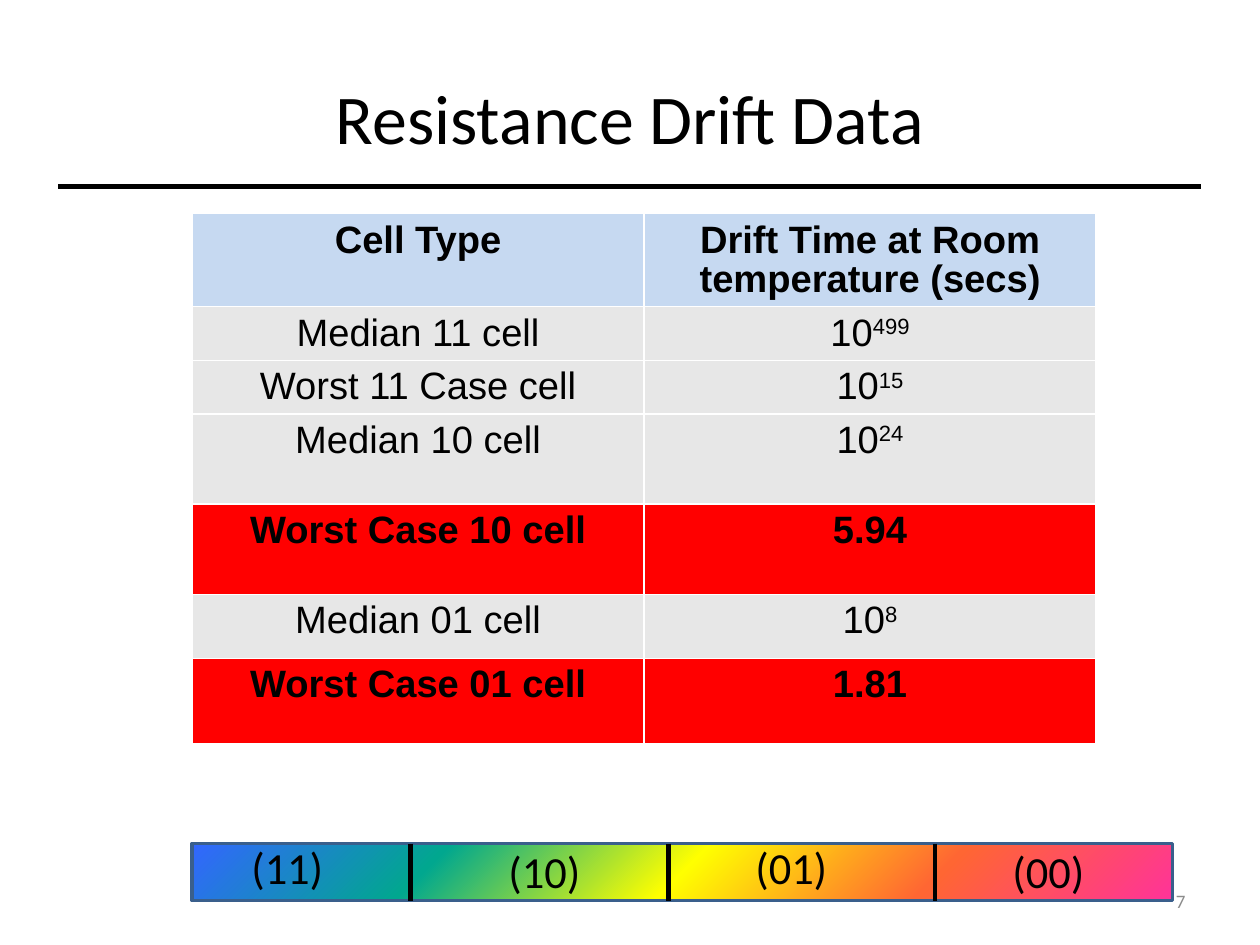
from lxml import etree
from pptx import Presentation
from pptx.dml.color import RGBColor
from pptx.enum.shapes import MSO_CONNECTOR as Line, MSO_SHAPE as Shape
from pptx.enum.text import MSO_ANCHOR as Anchor, PP_ALIGN as Align
from pptx.oxml import parse_xml
from pptx.oxml.ns import nsdecls, qn
from pptx.util import Cm, Inches, Pt


def add_run(para, text, size, color="000000", font="Calibri", bold=False):
    run = para.add_run()
    run.text = text
    run.font.size, run.font.name, run.font.bold = Pt(size), font, bold
    run.font.color.rgb = RGBColor.from_string(color)
    return run


def add_rule(x1, y1, x2, y2):
    """Draw a thick black line without a shadow."""
    rule = slide.shapes.add_connector(
        Line.STRAIGHT, Inches(x1), Inches(y1), Inches(x2), Inches(y2))
    rule.line.width = Pt(3)
    rule.line.color.rgb = RGBColor.from_string("000000")
    etree.SubElement(rule._element.spPr, qn("a:effectLst"))


WIDE, HIGH = Cm(28), Cm(21)
LEFT = 1.68

deck = Presentation()
deck.slide_width, deck.slide_height = WIDE, HIGH
slide = deck.slides.add_slide(deck.slide_layouts[5])

# Title and rule
title = slide.shapes.title
title.left, title.top = int(WIDE * 0.05), int(HIGH * 0.04)
title.width, title.height = int(WIDE * 0.9), int(HIGH / 6)
title.text_frame.vertical_anchor = Anchor.MIDDLE
para = title.text_frame.paragraphs[0]
para.alignment = Align.CENTER
add_run(para, "Resistance Drift Data", 44)
add_rule(0.51, 1.63, 10.51, 1.63)

# Drift table: cell type, time, exponent, row height, fill, bold
HEAD, PLAIN, ALERT = ("C6D9F1", True), ("E7E7E7", False), ("FF0000", True)
rows = [
    ("Cell Type", "Drift Time at Room temperature (secs)", "", 0.81, HEAD),
    ("Median 11 cell", "10", "499", 0.47, PLAIN),
    ("Worst 11 Case cell", "10", "15", 0.47, PLAIN),
    ("Median 10 cell", "10", "24", 0.79, PLAIN),
    ("Worst Case 10 cell", "5.94", "", 0.79, ALERT),
    ("Median 01 cell", "10", "8", 0.56, PLAIN),
    ("Worst Case 01 cell", "1.81", "", 0.75, ALERT),
]
total = sum(row[3] for row in rows)
table = slide.shapes.add_table(
    len(rows), 2, Inches(LEFT), Inches(1.87), Inches(7.91), Inches(total)).table
table.first_row = table.horz_banding = False
for r, (kind, time, power, tall, (fill, bold)) in enumerate(rows):
    table.rows[r].height = Inches(tall)
    for c, text in enumerate((kind, time)):
        cell = table.cell(r, c)
        cell.margin_top, cell.margin_bottom = Inches(0.07), Inches(0.05)
        cell.fill.solid()
        cell.fill.fore_color.rgb = RGBColor.from_string(fill)
        para = cell.text_frame.paragraphs[0]
        para.alignment, para.line_spacing = Align.CENTER, 0.93
        add_run(para, text, 24, font="Arial", bold=bold)
        if c == 1 and power:
            run = add_run(para, power, 24, font="Arial", bold=bold)
            run.font._element.set("baseline", "30000")

# Resistance band, shaded from the lower right corner
top, tall = 7.38, 0.5
band = slide.shapes.add_shape(
    Shape.RECTANGLE, Inches(LEFT), Inches(top), Inches(8.58), Inches(tall))
band.shadow.inherit = False
band.line.width = Pt(2)
band.line.color.rgb = RGBColor.from_string("3A5F8C")
hues = ["FF3399", "FF6633", "FFFF00", "01A78F", "3366FF"]
stops = "".join(
    f'<a:gs pos="{i * 25000}"><a:srgbClr val="{hue}"/></a:gs>'
    for i, hue in enumerate(hues))
shade = parse_xml(
    f'<a:gradFill {nsdecls("a")} rotWithShape="1"><a:gsLst>{stops}</a:gsLst>'
    '<a:path path="circle"><a:fillToRect l="100000" t="100000"/></a:path>'
    '</a:gradFill>')
band._element.spPr.find(qn("a:prstGeom")).addnext(shade)

for x in (3.59, 5.85, 8.18):
    add_rule(x, top, x, top + tall)

# Band labels and page number
black, gray = "000000", "8C8C8C"
labels = [
    ("(11)", 2.1, 7.34, 0.92, 0.54, 28, black, Align.LEFT),
    ("(10)", 4.35, 7.38, 0.92, 0.54, 28, black, Align.LEFT),
    ("(01)", 6.51, 7.34, 0.92, 0.54, 28, black, Align.LEFT),
    ("(00)", 8.76, 7.38, 0.83, 0.54, 28, black, Align.LEFT),
    ("7", 7.9, 7.66, 2.57, 0.44, 12, gray, Align.RIGHT),
]
for text, x, y, wide, high, size, color, align in labels:
    box = slide.shapes.add_textbox(Inches(x), Inches(y), Inches(wide), Inches(high))
    frame = box.text_frame
    frame.word_wrap = True
    para = frame.paragraphs[0]
    para.alignment = align
    if align == Align.RIGHT:
        frame.vertical_anchor = Anchor.MIDDLE
    else:
        para.line_spacing = 0.93
    add_run(para, text, size, color)

deck.save("out.pptx")
